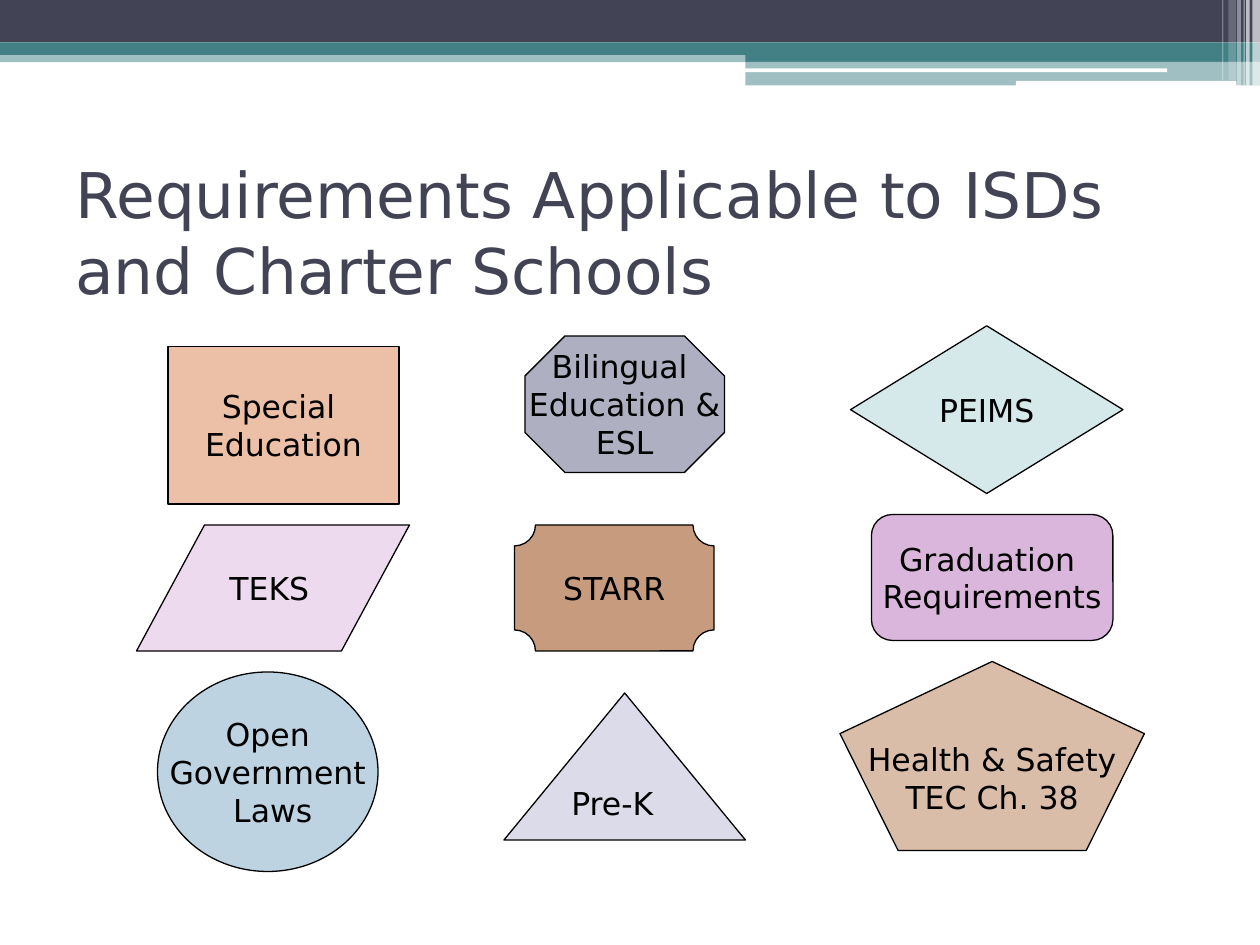
from dataclasses import dataclass
from typing import Optional

from lxml.etree import SubElement
from pptx import Presentation
from pptx.dml.color import RGBColor
from pptx.enum.shapes import MSO_SHAPE
from pptx.enum.text import MSO_ANCHOR, PP_ALIGN
from pptx.oxml.ns import qn
from pptx.util import Pt

WHITE = RGBColor(0xFF, 0xFF, 0xFF)
BLACK = RGBColor(0, 0, 0)
NAVY = RGBColor(0x42, 0x44, 0x56)
TEAL = RGBColor(0x43, 0x80, 0x86)
PEACH = RGBColor(0xEB, 0xC0, 0xA7)
SLATE = RGBColor(0xAE, 0xB0, 0xC1)
MINT = RGBColor(0xD6, 0xE9, 0xEA)
PINK = RGBColor(0xED, 0xDA, 0xEE)
BROWN = RGBColor(0xC6, 0x9B, 0x7E)
MAUVE = RGBColor(0xDB, 0xB6, 0xDC)
LILAC = RGBColor(0xDB, 0xDB, 0xE9)
TAN = RGBColor(0xD9, 0xBD, 0xA9)
BLUE = RGBColor(0xBE, 0xD3, 0xE1)

FACE = "DejaVu Sans"
WIDE, HIGH = 720, 540


@dataclass
class Bar:
    left: float
    top: float
    width: float
    height: float
    color: RGBColor
    alpha: int = 100
    kind: MSO_SHAPE = MSO_SHAPE.RECTANGLE


@dataclass
class Topic:
    kind: MSO_SHAPE
    left: float
    top: float
    width: float
    height: float
    color: RGBColor
    lines: tuple[str, ...]
    bend: Optional[float] = None
    shift: float = 0


ROUND = MSO_SHAPE.ROUNDED_RECTANGLE
BARS = [
    Bar(0, 29, WIDE, 6.5, TEAL, 50),
    Bar(0, 0, WIDE, 24.3, NAVY),
    Bar(0, 24.2, WIDE, 7.2, TEAL),
    Bar(426, 28, 294, 7.2, TEAL),
    Bar(426, 34.9, 294, 13.9, TEAL, 50),
    Bar(425.5, 39.1, 241.5, 2.2, WHITE, kind=ROUND),
    Bar(580.5, 46.3, 126, 2.9, WHITE, kind=ROUND),
]
STRIPES = [
    (715.6, 4.4, 49, 65),
    (712.1, 2.1, 49, 65),
    (710.6, 0.7, 49, 60),
    (707, 2.1, 49, 40),
    (702, 4.3, 46, 20),
    (698.4, 0.7, 46, 30),
]
BARS += [Bar(x, 0, w, h, WHITE, a) for x, w, h, a in STRIPES]

TOPICS = [
    Topic(MSO_SHAPE.RECTANGLE, 96, 198, 132, 90, PEACH,
          ("Special ", "Education")),
    Topic(MSO_SHAPE.OCTAGON, 300, 192, 114, 78, SLATE,
          ("Bilingual ", "Education &", "ESL")),
    Topic(MSO_SHAPE.DIAMOND, 486, 186.2, 155.7, 95.8, MINT, ("PEIMS",)),
    Topic(MSO_SHAPE.PARALLELOGRAM, 78, 300, 156, 72, PINK,
          ("TEKS",), 0.54, 4),
    Topic(MSO_SHAPE.PLAQUE, 294, 300, 114, 72, BROWN, ("STARR",)),
    Topic(ROUND, 498, 294, 138, 72, MAUVE,
          ("Graduation ", "Requirements")),
    Topic(MSO_SHAPE.ISOSCELES_TRIANGLE, 288, 396, 138, 84, LILAC,
          ("Pre-K",), shift=14),
    Topic(MSO_SHAPE.REGULAR_PENTAGON, 480, 378, 174, 108, TAN,
          ("Health & Safety", "TEC Ch. 38")),
    Topic(MSO_SHAPE.OVAL, 90, 384, 126, 114, BLUE,
          ("Open", "Government", " Laws")),
]


def apply(item, form: dict) -> None:
    for key, value in form.items():
        setattr(item, key, value)


def add_form(slide, part):
    box = (part.left, part.top, part.width, part.height)
    shape = slide.shapes.add_shape(part.kind, *map(Pt, box))
    shape.shadow.inherit = False
    shape.fill.solid()
    shape.fill.fore_color.rgb = part.color
    return shape


def write(frame, lines: tuple[str, ...], size: float,
          color: RGBColor, align: PP_ALIGN) -> None:
    frame.text = "\n".join(lines)
    for para in frame.paragraphs:
        para.alignment = align
        font = para.runs[0].font
        apply(font, {"name": FACE, "size": Pt(size)})
        font.color.rgb = color


def draw_bar(slide, bar: Bar) -> None:
    shape = add_form(slide, bar)
    shape.line.fill.background()
    if bar.alpha < 100:
        tint = shape.fill._xPr.find(qn("a:solidFill"))[0]
        SubElement(tint, qn("a:alpha"), val=str(bar.alpha * 1000))


def draw_topic(slide, topic: Topic) -> None:
    shape = add_form(slide, topic)
    if topic.bend is not None:
        shape.adjustments[0] = topic.bend
    shape.line.color.rgb = BLACK
    shape.line.width = Pt(0.75)
    frame = shape.text_frame
    apply(frame, {
        "word_wrap": False,
        "vertical_anchor": MSO_ANCHOR.MIDDLE,
        "margin_right": Pt(7.2 + topic.shift),
    })
    write(frame, topic.lines, 18, BLACK, PP_ALIGN.CENTER)


def draw_title(slide, text: str) -> None:
    box = slide.shapes.add_textbox(Pt(36), Pt(90), Pt(648), Pt(84))
    apply(box.text_frame, {
        "word_wrap": True,
        "vertical_anchor": MSO_ANCHOR.MIDDLE,
    })
    write(box.text_frame, (text,), 36, NAVY, PP_ALIGN.LEFT)


def main() -> None:
    deck = Presentation()
    apply(deck, {"slide_width": Pt(WIDE), "slide_height": Pt(HIGH)})
    slide = deck.slides.add_slide(deck.slide_layouts[6])
    for bar in BARS:
        draw_bar(slide, bar)
    draw_title(slide, "Requirements Applicable to ISDs and Charter Schools")
    for topic in TOPICS:
        draw_topic(slide, topic)
    deck.save("out.pptx")


if __name__ == "__main__":
    main()
